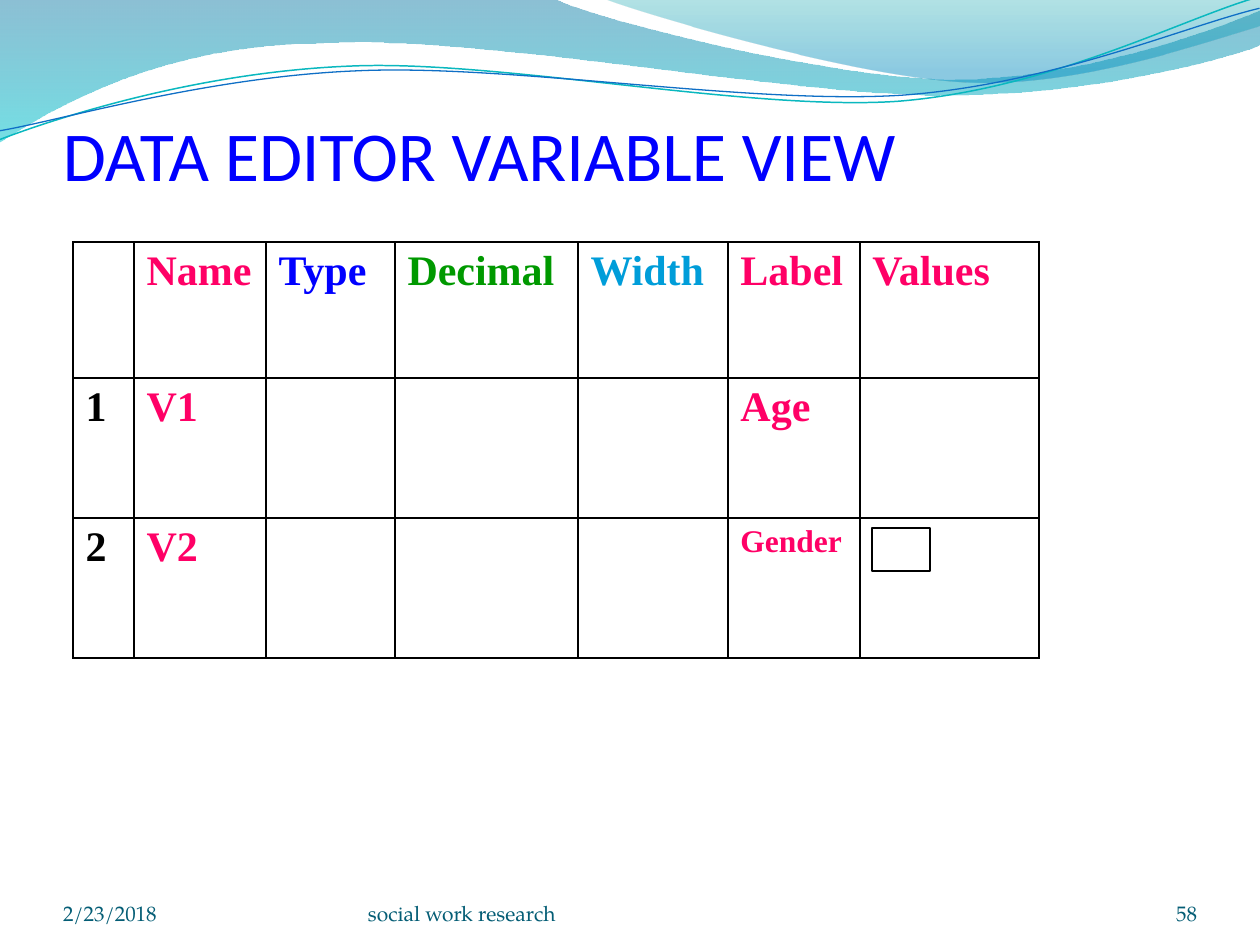
import lxml.etree
import pptx
import pptx.dml.color
import pptx.enum.shapes
import pptx.enum.text
import pptx.oxml.ns
import pptx.util

PX = 914400 / 126
ALIGN = pptx.enum.text.PP_ALIGN
SERIF = "Times New Roman"
FOOTER_FONT = "TeX Gyre Pagella"
PINK, BLUE, GREEN, SKY, BLACK = "FF0066", "0000FF", "009900", "009DD9", "000000"

LARGE_WAVE = [
    [(0, -1)], [(554, -1)],
    [(600, 21), (837, 79), (955, 79)], [(1075, 79), (1207, 33), (1260, 11)],
    [(1261, 45)],
    [(1239, 55), (1096, 96), (940, 95)], [(784, 95), (481, 35), (324, 43)],
    [(163, 44), (58, 105), (-1, 142)],
]
SMALL_WAVE = [
    [(604, -1)],
    [(641, 14), (859, 78), (969, 82)], [(1079, 87), (1211, 40), (1260, 26)],
    [(1260, 0)],
]
TEAL_LINE = [
    [(-3, 110)],
    [(58, 90), (199, 52), (350, 53)], [(498, 53), (745, 117), (896, 114)],
    [(1049, 109), (1184, 45), (1260, 27)],
]
BLUE_LINE = [
    [(-2, 101)],
    [(57, 94), (207, 57), (357, 58)], [(509, 58), (750, 111), (902, 108)],
    [(1052, 104), (1188, 52), (1262, 38)],
]

COLUMNS = [61, 132, 129, 183, 150, 132, 179]
ROWS = [136, 140, 140]
CELLS = {
    (0, 1): ("Name", PINK, 24),
    (0, 2): ("Type", BLUE, 24),
    (0, 3): ("Decimal", GREEN, 24),
    (0, 4): ("Width", SKY, 24),
    (0, 5): ("Label", PINK, 24),
    (0, 6): ("Values", PINK, 24),
    (1, 0): ("1", BLACK, 24),
    (1, 1): ("V1", PINK, 24),
    (1, 5): ("Age", PINK, 24),
    (2, 0): ("2", BLACK, 24),
    (2, 1): ("V2", PINK, 24),
    (2, 5): ("Gender", PINK, 18),
}


def px(length):
    return pptx.util.Emu(round(length * PX))


def color(value):
    return pptx.dml.color.RGBColor.from_string(value)


def add_child(parent, tag, **attributes):
    return lxml.etree.SubElement(parent, pptx.oxml.ns.qn(tag), attributes)


def bend_segments(shape, segments):
    corners = list(shape._element.spPr.iter(pptx.oxml.ns.qn("a:lnTo")))
    for segment in segments[1:]:
        members, corners = corners[:len(segment)], corners[len(segment):]
        if len(segment) == 3:
            curve = lxml.etree.Element(pptx.oxml.ns.qn("a:cubicBezTo"))
            members[0].addprevious(curve)
            for member in members:
                curve.append(member[0])
                member.getparent().remove(member)


def add_outline(shapes, segments, close):
    points = [(px(x), px(y)) for segment in segments for x, y in segment]
    builder = shapes.build_freeform(*points[0], scale=1.0)
    builder.add_line_segments(points[1:], close=close)
    shape = builder.convert_to_shape()
    shape.shadow.inherit = False
    bend_segments(shape, segments)
    return shape


def add_wave(page, segments, stops):
    shape = add_outline(page.shapes, segments, True)
    shape.line.fill.background()
    shape.fill.gradient()
    shape.fill.gradient_angle = 270
    for stop, (position, value, _) in zip(shape.fill.gradient_stops, stops):
        stop.position = position
        stop.color.rgb = color(value)
    tints = shape._element.spPr.iter(pptx.oxml.ns.qn("a:srgbClr"))
    for tint, (_, _, opacity) in zip(list(tints), stops):
        add_child(tint, "a:alpha", val=str(opacity * 1000))


def set_line(shape, value, width):
    shape.line.color.rgb = color(value)
    shape.line.width = pptx.util.Pt(width)


def add_curve(group, segments, value, width):
    shape = add_outline(group.shapes, segments, False)
    shape.fill.background()
    set_line(shape, value, width)
    shape.rotation = 357.3


def add_span(para, text, font, size, value, bold=False):
    span = para.add_run()
    span.text = text
    span.font.name = font
    span.font.size = pptx.util.Pt(size)
    span.font.bold = bold
    span.font.color.rgb = color(value)


def add_text(page, place, text, font, size, value, align=ALIGN.LEFT, top_inset=0):
    box = page.shapes.add_textbox(*map(px, place))
    frame = box.text_frame
    frame.word_wrap = True
    frame.vertical_anchor = pptx.enum.text.MSO_ANCHOR.BOTTOM
    frame.margin_left = frame.margin_right = frame.margin_bottom = 0
    frame.margin_top = px(top_inset)
    para = frame.paragraphs[0]
    para.alignment = align
    add_span(para, text, font, size, value)


def add_value_box(page):
    box = page.shapes.add_shape(
        pptx.enum.shapes.MSO_SHAPE.RECTANGLE, px(872), px(528), px(58), px(43)
    )
    box.shadow.inherit = False
    box.fill.solid()
    box.fill.fore_color.rgb = color("FFFFFF")
    set_line(box, BLACK, 0.75)


def set_borders(cell):
    properties = cell._tc.get_or_add_tcPr()
    for side in ("a:lnL", "a:lnR", "a:lnT", "a:lnB"):
        line = add_child(properties, side, w=str(pptx.util.Pt(1)))
        add_child(add_child(line, "a:solidFill"), "a:srgbClr", val=BLACK)


def add_variable_table(page):
    table = page.shapes.add_table(
        len(ROWS), len(COLUMNS), px(73), px(242), px(sum(COLUMNS)), px(sum(ROWS))
    ).table
    table.first_row = table.horz_banding = False
    for column, width in zip(table.columns, COLUMNS):
        column.width = px(width)
    for row, height in zip(table.rows, ROWS):
        row.height = px(height)
    for cell in table.iter_cells():
        set_borders(cell)
        cell.fill.background()
    for position, (text, value, size) in CELLS.items():
        para = table.cell(*position).text_frame.paragraphs[0]
        para.alignment = ALIGN.JUSTIFY
        add_span(para, text, SERIF, size, value, bold=True)


def add_footer(page, left, width, text, align=ALIGN.LEFT):
    add_text(page, (left, 876, width, 50), text, FOOTER_FONT, 12, "045D75", align)


def main():
    deck = pptx.Presentation()
    deck.slide_width, deck.slide_height = px(1260), px(945)
    page = deck.slides.add_slide(deck.slide_layouts[6])
    add_wave(page, LARGE_WAVE, [(0, "0074A1", 45), (1, "00C6CF", 55)])
    add_wave(page, SMALL_WAVE, [(0, "00A1A9", 30), (0.8, "008BBF", 45)])
    group = page.shapes.add_group_shape()
    add_curve(group, TEAL_LINE, "0AB8BF", 0.85)
    add_curve(group, BLUE_LINE, "0F6FC6", 0.75)
    add_text(page, (63, 38, 1134, 157), "DATA EDITOR VARIABLE VIEW",
             "Calibri", 40, BLUE, top_inset=6)
    add_value_box(page)
    add_variable_table(page)
    add_footer(page, 63, 294, "2/23/2018")
    add_footer(page, 1092, 105, "58", ALIGN.RIGHT)
    add_footer(page, 368, 462, "social work research")
    deck.save("out.pptx")


if __name__ == "__main__":
    main()
